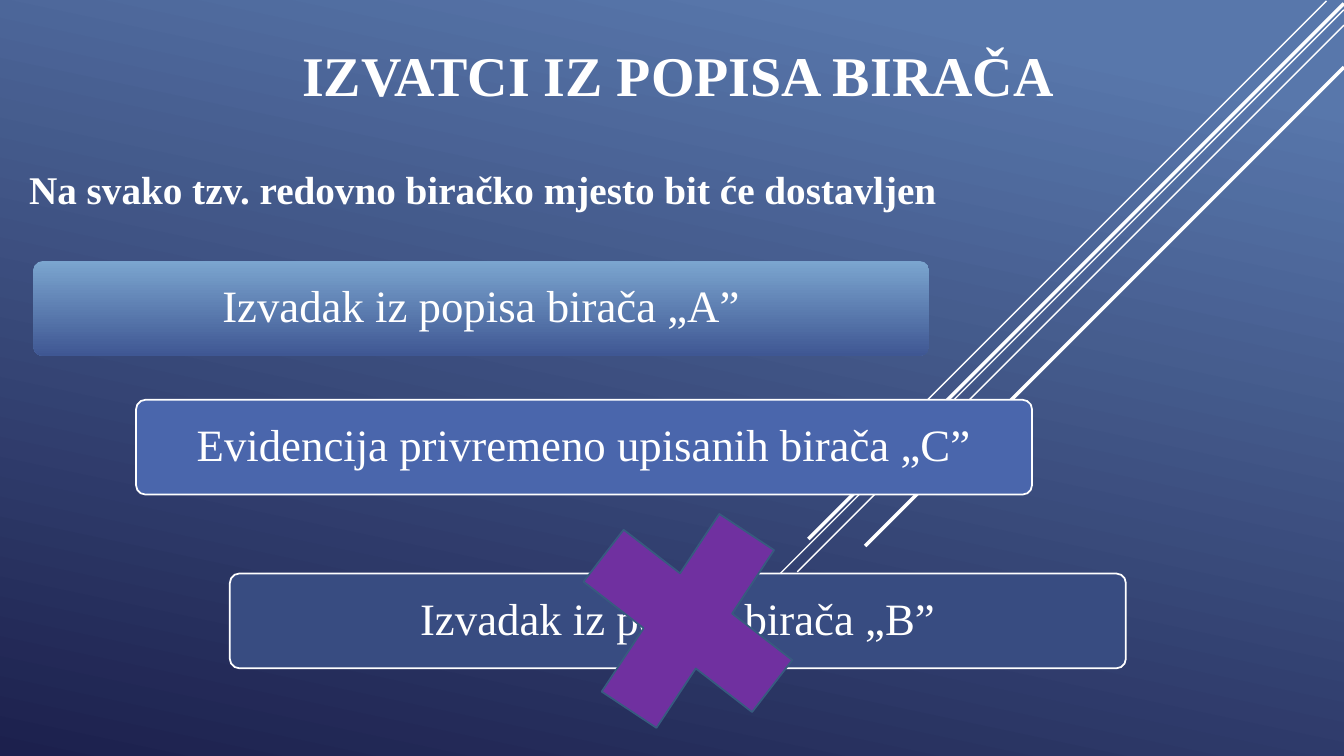
from dataclasses import dataclass

import lxml.etree
import pptx
import pptx.dml.color
import pptx.enum.shapes
import pptx.enum.text
import pptx.oxml.ns
import pptx.util

Pt = pptx.util.Pt
Shape = pptx.enum.shapes.MSO_SHAPE
Align = pptx.enum.text.PP_ALIGN
Anchor = pptx.enum.text.MSO_ANCHOR


@dataclass(frozen=True)
class Theme:
    font: str = "Times New Roman"
    white: str = "FFFFFF"
    background: tuple = ((0.1, "5877AB"), (1, "1C204D"))
    extract_a: tuple = ((0, "7BA5CF"), (1, "3F5793"))
    extract_c: str = "4A66AC"
    extract_b: str = "384C81"
    cross: str = "7030A0"
    cross_edge: str = "375B7F"
    title_size: int = 40
    subtitle_size: int = 28
    box_size: int = 32
    edge_width: float = 1.25


THEME = Theme()


def rgb(value):
    return pptx.dml.color.RGBColor.from_string(value)


def paint(fill, colour, angle=90):
    """Fill with one colour, or with (position, colour) stops at a clockwise angle."""
    if isinstance(colour, str):
        fill.solid()
        fill.fore_color.rgb = rgb(colour)
        return
    fill.gradient()
    fill.gradient_angle = 360 - angle
    for stop, (position, stop_colour) in zip(fill.gradient_stops, colour):
        stop.position = position
        stop.color.rgb = rgb(stop_colour)


def outline(line, colour, width):
    line.color.rgb = rgb(colour)
    line.width = Pt(width)


def write(shape, text, size, align, anchor, bold=False):
    frame = shape.text_frame
    frame.word_wrap = True
    frame.vertical_anchor = anchor
    paragraph = frame.paragraphs[0]
    paragraph.alignment = align
    run = paragraph.add_run()
    run.text = text
    run.font.name = THEME.font
    run.font.size = Pt(size)
    run.font.bold = bold
    run.font.color.rgb = rgb(THEME.white)
    return paragraph


def add_heading(slide, box, text, size, align, anchor):
    shape = slide.shapes.add_textbox(*map(Pt, box))
    return write(shape, text, size, align, anchor, bold=True)


def add_diagonals(slide, right, top):
    """Draw 45° lines running down and left from the top right corner."""
    for inset, drop, reach, width in (
        (12.5, 0.7, 300, 1),
        (0, 7, 479, 1),
        (0, 18, 390.5, 1),
        (0, 2.5, 382.5, 2.5),
        (0, 48, 342, 2.5),
    ):
        x, y = right - inset, top + drop
        line = slide.shapes.add_connector(
            pptx.enum.shapes.MSO_CONNECTOR.STRAIGHT,
            Pt(x), Pt(y), Pt(x - reach), Pt(y + reach),
        )
        outline(line.line, THEME.white, width)
        properties = line.element.find(pptx.oxml.ns.qn("p:spPr"))
        lxml.etree.SubElement(properties, pptx.oxml.ns.qn("a:effectLst"))


def add_extract(slide, box, text, colour, edged):
    shape = slide.shapes.add_shape(Shape.ROUNDED_RECTANGLE, *map(Pt, box))
    shape.shadow.inherit = False
    shape.adjustments[0] = 0.1
    paint(shape.fill, colour)
    if edged:
        outline(shape.line, THEME.white, THEME.edge_width)
    else:
        shape.line.fill.background()
    paragraph = write(shape, text, THEME.box_size, Align.CENTER, Anchor.MIDDLE)
    paragraph.line_spacing = 0.9


def add_cross(slide, box):
    cross = slide.shapes.add_shape(Shape.MATH_MULTIPLY, *map(Pt, box))
    cross.shadow.inherit = False
    cross.rotation = 350.6
    paint(cross.fill, THEME.cross)
    outline(cross.line, THEME.cross_edge, THEME.edge_width)


def build_slide(presentation):
    slide = presentation.slides.add_slide(presentation.slide_layouts[6])
    paint(slide.background.fill, THEME.background, angle=102)
    add_diagonals(slide, 960, 0)
    add_heading(slide, (0, 8.6, 968.4, 72), "IZVATCI IZ POPISA BIRAČA",
                THEME.title_size, Align.CENTER, Anchor.BOTTOM)
    subtitle = add_heading(
        slide, (13.7, 114.5, 723.6, 67.7),
        "Na svako tzv. redovno biračko mjesto bit će dostavljen",
        THEME.subtitle_size, Align.LEFT, Anchor.TOP)
    subtitle.space_before = Pt(2.8)
    for left, top, text, colour, edged in (
        (23.8, 186.5, "Izvadak iz popisa birača „A”", THEME.extract_a, False),
        (97.2, 285.6, "Evidencija privremeno upisanih birača „C”", THEME.extract_c, True),
        (164.2, 409.7, "Izvadak iz popisa birača „B”", THEME.extract_b, True),
    ):
        add_extract(slide, (left, top, 640, 67.7), text, colour, edged)
    add_cross(slide, (391.7, 336.2, 199.4, 214.6))


def main():
    presentation = pptx.Presentation()
    presentation.slide_width = Pt(960)
    presentation.slide_height = Pt(540)
    build_slide(presentation)
    presentation.save("out.pptx")


if __name__ == "__main__":
    main()
